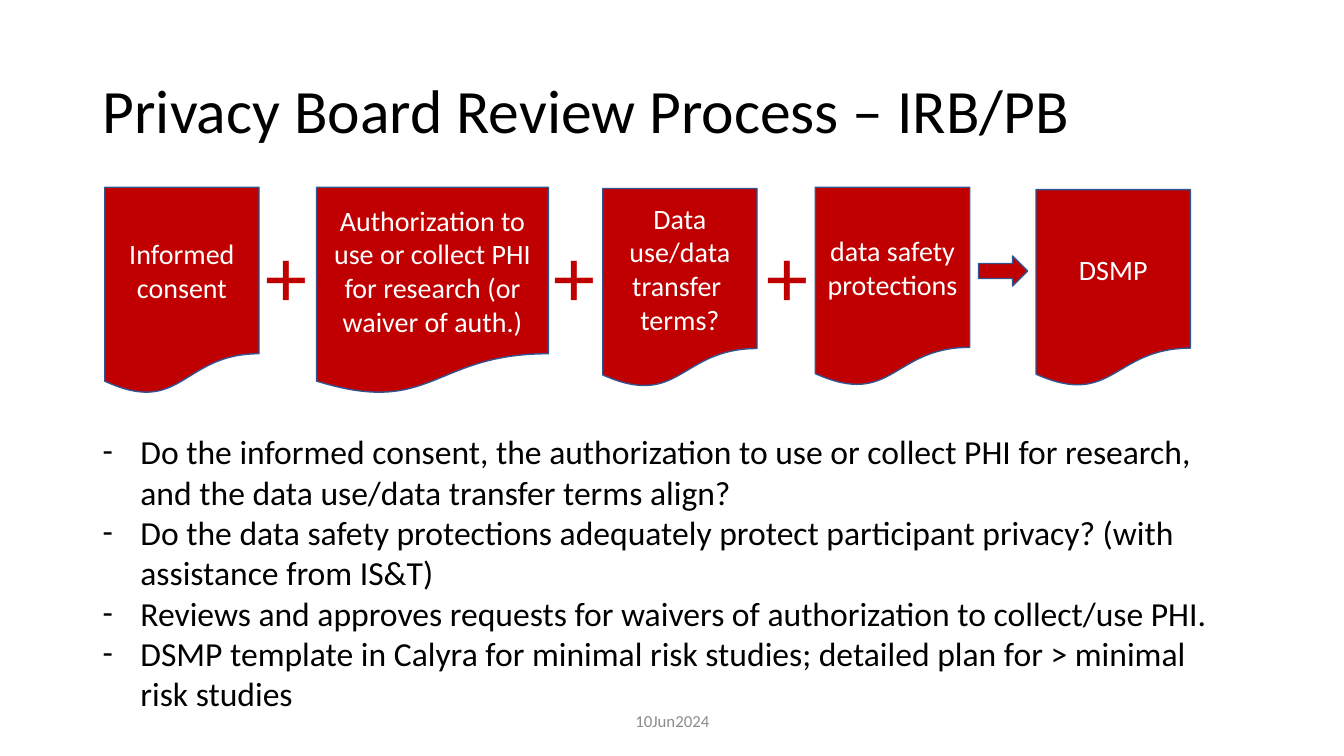
from lxml import etree
from pptx import Presentation
from pptx.dml.color import RGBColor
from pptx.enum.shapes import MSO_SHAPE
from pptx.enum.text import MSO_ANCHOR, PP_ALIGN
from pptx.oxml.ns import qn
from pptx.util import Cm, Pt

DOCUMENT, ARROW = MSO_SHAPE.FLOWCHART_DOCUMENT, MSO_SHAPE.RIGHT_ARROW
TOP, MIDDLE = MSO_ANCHOR.TOP, MSO_ANCHOR.MIDDLE
LEFT, CENTER = PP_ALIGN.LEFT, PP_ALIGN.CENTER

FONT = "Calibri"
RED, BLUE, BLACK, WHITE, GRAY = "C00000", "325491", "000000", "FFFFFF", "8C8C8C"

DOCUMENTS = [
    (0, 0, 3.89, 5.23, ["Informed", "consent"]),
    (5.34, 0, 5.84, 5.23,
     ["Authorization to use or collect PHI for research (or waiver of auth.)"]),
    (12.55, 0.03, 3.89, 5.03, ["Data use/data transfer ", "terms?"]),
    (17.91, 0, 3.89, 5.03, ["data safety protections"]),
    (23.47, 0.06, 3.89, 4.98, ["DSMP"]),
]
PLUS_LEFTS = [3.79, 11.05, 16.44]
QUESTIONS = [
    "Do the informed consent, the authorization to use or collect PHI for research, "
    "and the data use/data transfer terms align?",
    "Do the data safety protections adequately protect participant privacy? "
    "(with assistance from IS&T)",
    "Reviews and approves requests for waivers of authorization to collect/use PHI.",
    "DSMP template in Calyra for minimal risk studies; detailed plan for > minimal "
    "risk studies",
]


def color(value):
    """Turn a hex string into a colour."""
    return RGBColor.from_string(value)


def write_text(shape, lines, size, ink=BLACK, align=LEFT, anchor=TOP,
               spacing=1.0, bullet=None):
    """Fill a shape with formatted paragraphs."""
    frame = shape.text_frame
    frame.word_wrap = True
    frame.vertical_anchor = anchor
    for index, line in enumerate(lines):
        paragraph = frame.paragraphs[0] if index == 0 else frame.add_paragraph()
        paragraph.alignment = align
        paragraph.line_spacing = spacing
        run = paragraph.add_run()
        run.text = line
        run.font.name = FONT
        run.font.size = Pt(size)
        run.font.color.rgb = color(ink)
        if bullet:
            properties = paragraph._p.get_or_add_pPr()
            properties.set("marL", str(Cm(0.95)))
            properties.set("indent", str(-Cm(0.95)))
            etree.SubElement(properties, qn("a:buFont")).set("typeface", FONT)
            etree.SubElement(properties, qn("a:buChar")).set("char", bullet)


def add_text(slide, box, lines, size, **style):
    """Add a text box in a box of left, top, width and height."""
    shape = slide.shapes.add_textbox(*map(Cm, box))
    write_text(shape, lines, size, **style)


def add_block(slide, kind, box):
    """Add a red shape with a thin blue outline."""
    shape = slide.shapes.add_shape(kind, *map(Cm, box))
    shape.shadow.inherit = False
    shape.fill.solid()
    shape.fill.fore_color.rgb = color(RED)
    shape.line.color.rgb = color(BLUE)
    shape.line.width = Pt(1)
    return shape


def add_process(slide, left, top):
    """Lay out the documents, plus signs and arrow from a top left corner."""
    for x, y, width, height, lines in DOCUMENTS:
        shape = add_block(slide, DOCUMENT, (left + x, top + y, width, height))
        write_text(shape, lines, 20, ink=WHITE, align=CENTER, anchor=MIDDLE)
    for x in PLUS_LEFTS:
        add_text(slide, (left + x, top + 0.79, 1.47, 2.82), ["+"], 60, ink=RED)
    add_block(slide, ARROW, (left + 22.02, top + 1.73, 1.24, 0.76))


def main():
    """Build and save the slide."""
    presentation = Presentation()
    presentation.slide_width, presentation.slide_height = Cm(33.87), Cm(19.05)
    slide = presentation.slides.add_slide(presentation.slide_layouts[6])
    add_text(slide, (2.34, 1.02, 29.21, 3.68),
             ["Privacy Board Review Process – IRB/PB"], 44,
             anchor=MIDDLE, spacing=0.9)
    add_process(slide, 2.64, 4.72)
    add_text(slide, (2.34, 10.74, 29.18, 7.44), QUESTIONS, 24, bullet="-")
    add_text(slide, (11.23, 17.65, 11.43, 1.02), ["10Jun2024"], 12,
             ink=GRAY, align=CENTER, anchor=MIDDLE)
    presentation.save("out.pptx")


if __name__ == "__main__":
    main()
